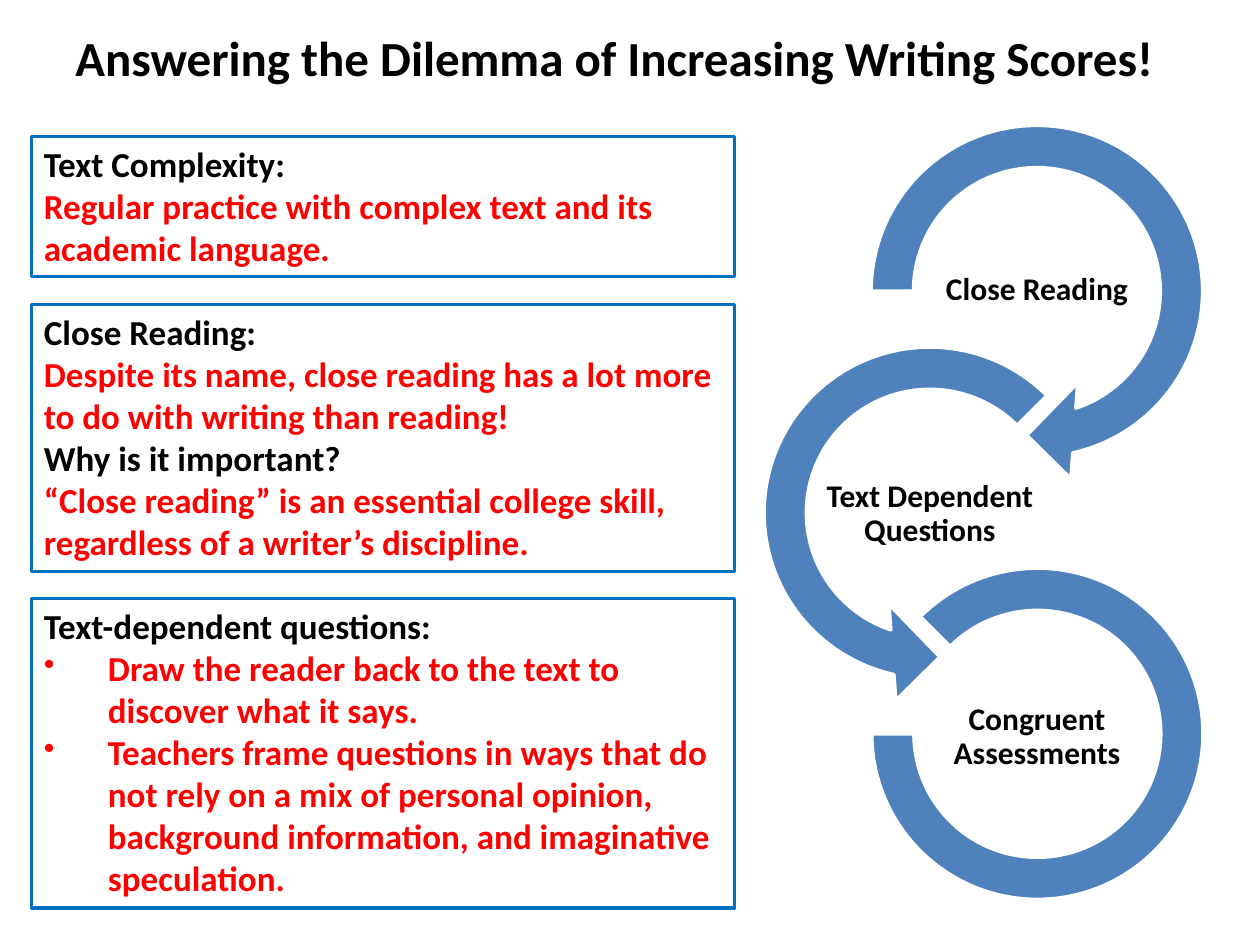
from dataclasses import dataclass

from lxml import etree
from pptx import Presentation
from pptx.dml.color import RGBColor
from pptx.enum.shapes import MSO_SHAPE
from pptx.enum.text import MSO_ANCHOR, MSO_AUTO_SIZE, PP_ALIGN
from pptx.oxml.ns import qn
from pptx.util import Pt

RECT = MSO_SHAPE.RECTANGLE
RIGHT_ARROW = MSO_SHAPE.CIRCULAR_ARROW
LEFT_ARROW = MSO_SHAPE.LEFT_CIRCULAR_ARROW
RING = MSO_SHAPE.BLOCK_ARC
TOP, MIDDLE = MSO_ANCHOR.TOP, MSO_ANCHOR.MIDDLE
LEFT, CENTER = PP_ALIGN.LEFT, PP_ALIGN.CENTER
GROW = MSO_AUTO_SIZE.SHAPE_TO_FIT_TEXT


@dataclass(frozen=True)
class Theme:
    font: str = "Calibri"
    ink: RGBColor = RGBColor(0, 0, 0)
    red: RGBColor = RGBColor(0xFF, 0, 0)
    edge: RGBColor = RGBColor(0x00, 0x70, 0xC0)
    arc: RGBColor = RGBColor(0x4F, 0x81, 0xBD)
    white: RGBColor = RGBColor(0xFF, 0xFF, 0xFF)
    title: int = 28
    body: int = 20
    label: int = 18
    line: int = 2


THEME = Theme()
INDENT = 36.6

# Each box: top, height, lines of (kind, text)
BOXES = [
    (78, 80, [
        ("head", "Text Complexity:"),
        ("plain", "Regular practice with complex text and its academic language."),
    ]),
    (174, 152.6, [
        ("head", "Close Reading:"),
        ("plain", "Despite its name, close reading has a lot more to do with "
                  "writing than reading!"),
        ("head", "Why is it important?"),
        ("plain", "“Close reading” is an essential college skill, regardless "
                  "of a writer’s discipline."),
    ]),
    (342, 177, [
        ("head", "Text-dependent questions:"),
        ("bullet", "Draw the reader back to the text to discover what it says."),
        ("bullet", "Teachers frame questions in ways that do not rely on a mix "
                   "of personal opinion, background information, and "
                   "imaginative speculation."),
    ]),
]

# Each step: preset, left, top, size, adjustments, label left, label text
STEPS = [
    (RIGHT_ARROW, 482.4, 56.2, 220.3, (0.1098, 11.423, 45, 108, 0.125),
     531.4, "Close Reading"),
    (LEFT_ARROW, 421.2, 182.9, 220.3, (0.1098, 11.423, 63, 189, 0.125),
     470.2, "Text Dependent Questions"),
    (RING, 498.2, 324.7, 189.3, (135, 108, 0.1274),
     531.4, "Congruent Assessments"),
]
LABEL_TOP, LABEL_GAP = 135.4, 127.7


def apply(target, values):
    for name, value in values.items():
        setattr(target, name, value)


def outline(shape, color):
    shape.shadow.inherit = False
    shape.line.color.rgb = color
    shape.line.width = Pt(THEME.line)


def set_frame(frame, pad=None, **values):
    apply(frame, {"word_wrap": True, **values})
    if pad is not None:
        sides = ("left", "top", "right", "bottom")
        apply(frame, {f"margin_{side}": Pt(pad) for side in sides})


def write(para, text, size, color, **values):
    apply(para, values)
    run = para.add_run()
    run.text = text
    apply(run.font, {"name": THEME.font, "size": Pt(size), "bold": True})
    run.font.color.rgb = color


def add_bullet(para):
    props = para._p.get_or_add_pPr()
    props.set("marL", str(Pt(INDENT)))
    props.set("indent", str(-Pt(INDENT)))
    etree.SubElement(props, qn("a:buSzPct")).set("val", "90000")
    etree.SubElement(props, qn("a:buChar")).set("char", "•")


def add_title(shapes, text):
    box = shapes.add_textbox(Pt(36), Pt(12.2), Pt(638), Pt(41))
    set_frame(box.text_frame, word_wrap=False, auto_size=GROW)
    write(box.text_frame.paragraphs[0], text, THEME.title, THEME.ink)


def add_box(shapes, top, height, lines):
    box = shapes.add_shape(RECT, Pt(18), Pt(top), Pt(401.8), Pt(height))
    box.fill.background()
    outline(box, THEME.edge)
    frame = box.text_frame
    set_frame(frame, vertical_anchor=TOP, auto_size=GROW)
    for i, (kind, text) in enumerate(lines):
        para = frame.add_paragraph() if i else frame.paragraphs[0]
        color = THEME.ink if kind == "head" else THEME.red
        write(para, text, THEME.body, color, alignment=LEFT)
        if kind == "bullet":
            add_bullet(para)


def add_arc(shapes, preset, left, top, size, adjust):
    arc = shapes.add_shape(preset, Pt(left), Pt(top), Pt(size), Pt(size))
    for i, value in enumerate(adjust):
        arc.adjustments[i] = value
    arc.fill.solid()
    arc.fill.fore_color.rgb = THEME.arc
    outline(arc, THEME.white)


def add_label(shapes, left, top, text):
    box = shapes.add_textbox(Pt(left), Pt(top), Pt(122.4), Pt(61.2))
    set_frame(box.text_frame, pad=0.9, vertical_anchor=MIDDLE)
    write(box.text_frame.paragraphs[0], text, THEME.label, THEME.ink,
          alignment=CENTER, line_spacing=0.9)


def add_cycle(shapes):
    parts = shapes.add_group_shape().shapes
    for i, (*arc, left, text) in enumerate(STEPS):
        add_arc(parts, *arc)
        add_label(parts, left, LABEL_TOP + i * LABEL_GAP, text)


def main():
    deck = Presentation()
    apply(deck, {"slide_width": Pt(720), "slide_height": Pt(540)})
    shapes = deck.slides.add_slide(deck.slide_layouts[6]).shapes
    add_cycle(shapes)
    add_title(shapes, "Answering the Dilemma of Increasing Writing Scores!")
    for box in BOXES:
        add_box(shapes, *box)
    deck.save("out.pptx")


if __name__ == "__main__":
    main()
